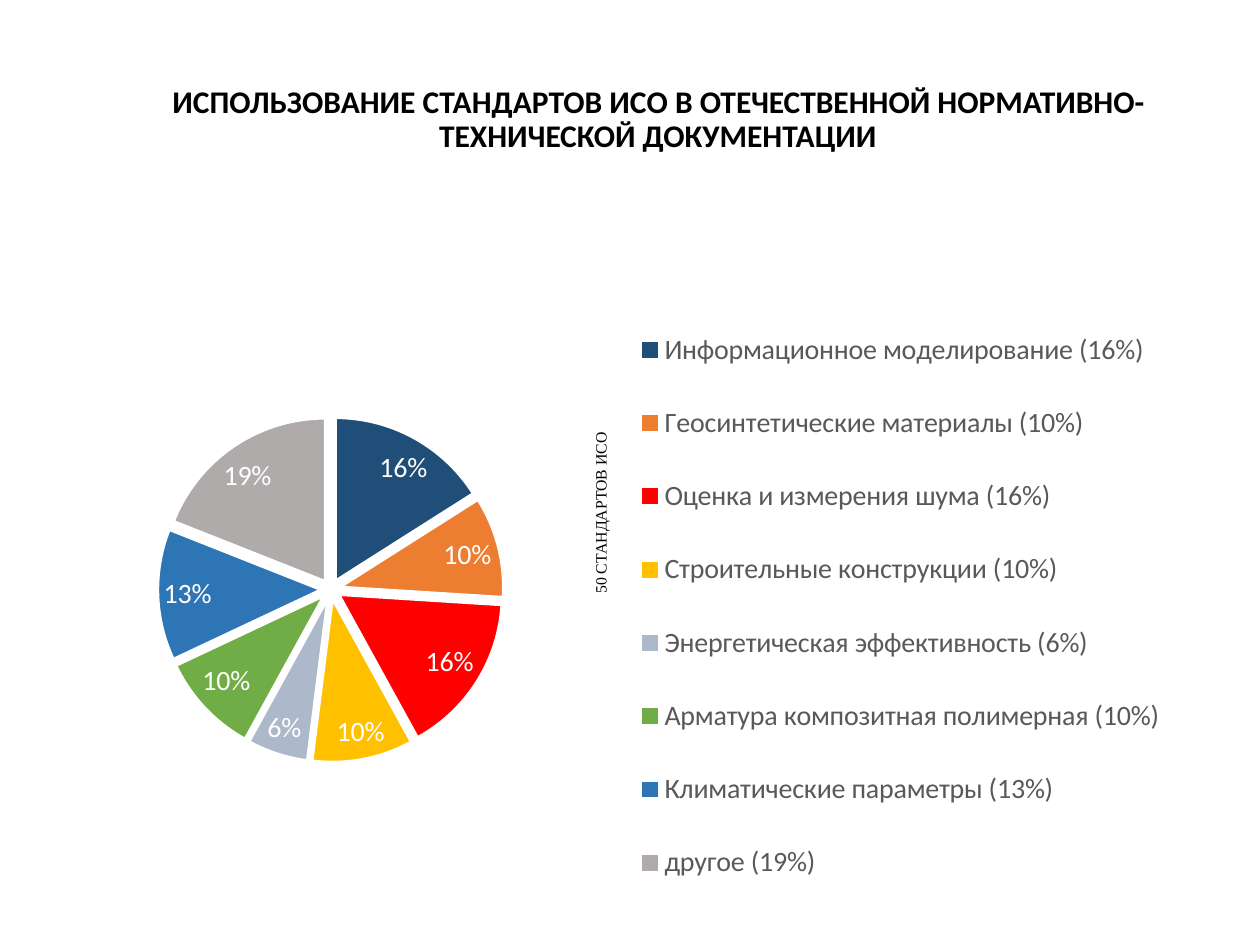
from dataclasses import dataclass

from lxml import etree
from pptx import Presentation
from pptx.chart import data as chart_data
from pptx.dml.color import RGBColor
from pptx.enum import chart as ch, text as tx
from pptx.oxml import ns
from pptx.util import Pt


@dataclass(frozen=True)
class Theme:
    font: str = "Calibri"
    note_font: str = "Times New Roman"
    title_size: int = 18
    chart_size: int = 16
    base_size: int = 10
    note_size: int = 9
    ink: str = "000000"
    legend_ink: str = "595959"
    label_ink: str = "FFFFFF"
    slice_edge: str = "FFFFFF"


THEME = Theme()

# Topic, share in percent, slice colour
SHARES = [
    ("Информационное моделирование", 16, "1F4E79"),
    ("Геосинтетические материалы", 10, "ED7D31"),
    ("Оценка и измерения шума", 16, "FF0000"),
    ("Строительные конструкции", 10, "FFC000"),
    ("Энергетическая эффективность", 6, "ADB9CA"),
    ("Арматура композитная полимерная", 10, "70AD47"),
    ("Климатические параметры", 13, "2E75B6"),
    ("другое", 19, "AFABAB"),
]


def style_font(font, name, size, colour, bold=False):
    font.name, font.size, font.bold = name, Pt(size), bold
    font.color.rgb = RGBColor.from_string(colour)


def make_layout(x, y, w, h, inner=False):
    """Manual chart layout, in fractions of the chart area."""
    layout = etree.Element(ns.qn("c:layout"))
    manual = etree.SubElement(layout, ns.qn("c:manualLayout"))
    settings = [("layoutTarget", "inner")] if inner else []
    settings += [("xMode", "edge"), ("yMode", "edge"),
                 ("x", x), ("y", y), ("w", w), ("h", h)]
    for tag, value in settings:
        etree.SubElement(manual, ns.qn(f"c:{tag}")).set("val", str(value))
    return layout


def drop_layout(parent):
    for old in parent.findall(ns.qn("c:layout")):
        parent.remove(old)


def add_title(slide, wording):
    title = slide.shapes.title
    title.left, title.top, title.width, title.height = Pt(76), Pt(37), Pt(600), Pt(64)
    frame = title.text_frame
    frame.text = wording
    frame.word_wrap = True
    frame.auto_size = tx.MSO_AUTO_SIZE.NONE
    frame.vertical_anchor = tx.MSO_ANCHOR.MIDDLE
    line = frame.paragraphs[0]
    line.alignment = tx.PP_ALIGN.CENTER
    line.line_spacing = 0.9
    style_font(line.runs[0].font, THEME.font, THEME.title_size, THEME.ink, bold=True)


def style_slices(series):
    for index, (_, _, colour) in enumerate(SHARES):
        look = series.points[index].format
        look.fill.solid()
        look.fill.fore_color.rgb = RGBColor.from_string(colour)
        look.line.color.rgb = RGBColor.from_string(THEME.slice_edge)
        look.line.width = Pt(1.5)
    # Pull the slices apart
    explosion = etree.Element(ns.qn("c:explosion"))
    explosion.set("val", "6")
    series._element.find(ns.qn("c:dPt")).addprevious(explosion)


def style_labels(plot):
    plot.has_data_labels = True
    labels = plot.data_labels
    labels.show_percentage = True
    labels.show_value = False
    labels.number_format = "0%"
    labels.number_format_is_linked = False
    # Best fit centres each label in its slice, so narrow neighbours stay clear
    labels.position = ch.XL_LABEL_POSITION.BEST_FIT
    style_font(labels.font, THEME.font, THEME.chart_size, THEME.label_ink)


def style_legend(chart):
    chart.has_legend = True
    legend = chart.legend
    legend.position = ch.XL_LEGEND_POSITION.TOP
    legend.include_in_layout = False
    style_font(legend.font, THEME.font, THEME.chart_size, THEME.legend_ink)
    drop_layout(legend._element)
    legend._element.find(ns.qn("c:legendPos")).addnext(
        make_layout(0.486, 0, 0.48, 0.995))


def add_shares_pie(slide):
    shares = chart_data.CategoryChartData()
    shares.categories = [f"{topic} ({share}%)" for topic, share, _ in SHARES]
    shares.add_series("Series 1", [share for _, share, _ in SHARES])
    chart = slide.shapes.add_chart(
        ch.XL_CHART_TYPE.PIE, Pt(31.7), Pt(167.8), Pt(665.3), Pt(359.3), shares).chart
    chart.has_title = False
    style_font(chart.font, THEME.font, THEME.base_size, THEME.ink)
    plot = chart.plots[0]
    plot.vary_by_categories = True
    style_slices(plot.series[0])
    style_labels(plot)
    style_legend(chart)
    plot_area = chart._chartSpace.chart.plotArea
    drop_layout(plot_area)
    plot_area.insert(0, make_layout(0.088, 0.179, 0.297, 0.583, inner=True))


def add_side_note(slide, wording):
    note = slide.shapes.add_textbox(Pt(288), Pt(282.2), Pt(110.2), Pt(18))
    note.rotation = 270
    frame = note.text_frame
    frame.text = wording
    frame.word_wrap = False
    frame.auto_size = tx.MSO_AUTO_SIZE.SHAPE_TO_FIT_TEXT
    style_font(frame.paragraphs[0].runs[0].font, THEME.note_font, THEME.note_size, THEME.ink)


def main():
    deck = Presentation()
    deck.slide_width, deck.slide_height = Pt(720), Pt(540)
    slide = deck.slides.add_slide(deck.slide_layouts[5])

    # Heading
    add_title(slide, "ИСПОЛЬЗОВАНИЕ СТАНДАРТОВ ИСО В ОТЕЧЕСТВЕННОЙ "
                     "НОРМАТИВНО-ТЕХНИЧЕСКОЙ ДОКУМЕНТАЦИИ")
    # Shares by topic
    add_shares_pie(slide)
    # Upright note beside the pie
    add_side_note(slide, "50 СТАНДАРТОВ ИСО")

    deck.save("out.pptx")


if __name__ == "__main__":
    main()
